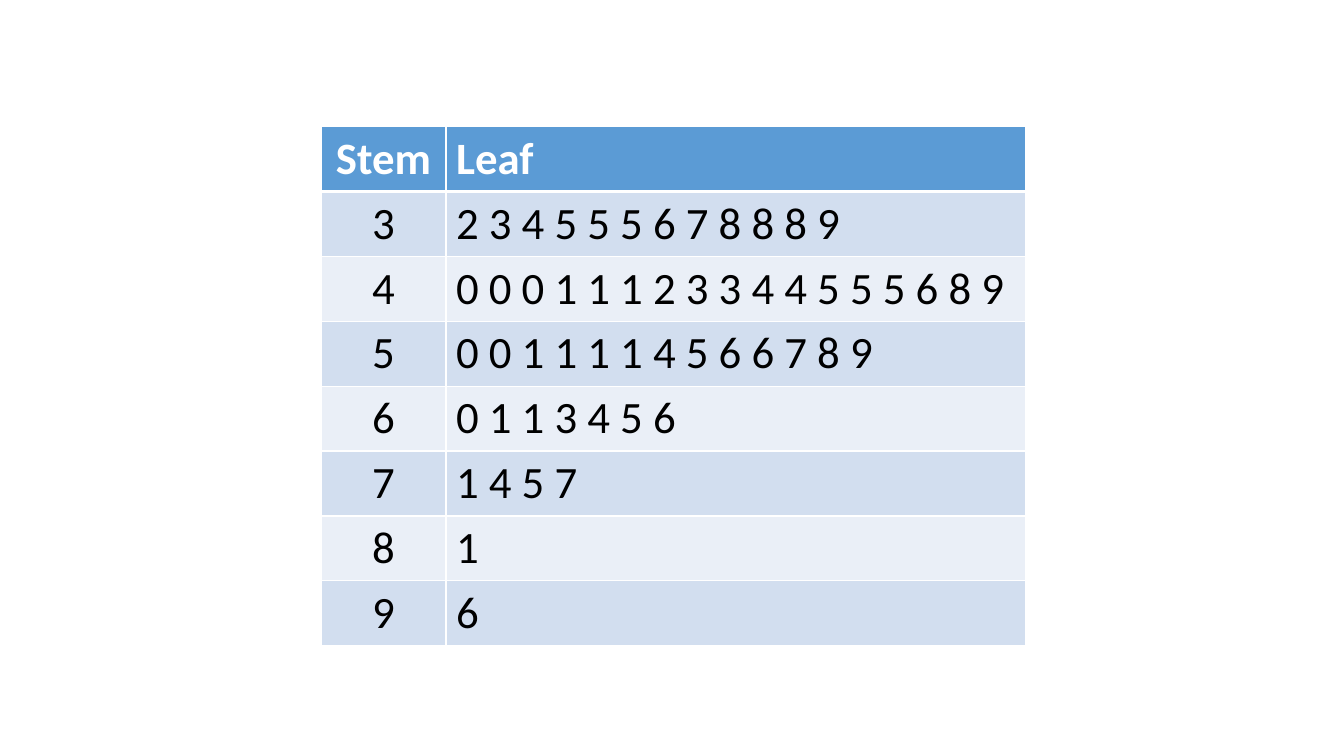
from lxml import etree
from pptx import Presentation
from pptx import util as u
from pptx.dml.color import RGBColor
from pptx.enum import text
from pptx.oxml import ns

WHITE = RGBColor(0xFF, 0xFF, 0xFF)
BLACK = RGBColor(0x00, 0x00, 0x00)
HEADER_BLUE = RGBColor(0x5B, 0x9B, 0xD5)
BAND_DARK = RGBColor(0xD2, 0xDE, 0xEF)
BAND_LIGHT = RGBColor(0xEA, 0xEF, 0xF7)

STEM_AND_LEAF = [
    ("Stem", "Leaf"),
    ("3", "2 3 4 5 5 5 6 7 8 8 8 9"),
    ("4", "0 0 0 1 1 1 2 3 3 4 4 5 5 5 6 8 9"),
    ("5", "0 0 1 1 1 1 4 5 6 6 7 8 9"),
    ("6", "0 1 1 3 4 5 6"),
    ("7", "1 4 5 7"),
    ("8", "1"),
    ("9", "6"),
]


class SlideBuilder:
    font = "Calibri"
    size = u.Pt(32)
    thin = u.Pt(1)
    thick = u.Pt(3)

    def __init__(self, slide):
        self.slide = slide

    def borders(self, cell, row):
        properties = cell._tc.get_or_add_tcPr()
        widths = {
            "lnL": self.thin,
            "lnR": self.thin,
            "lnT": self.thick if row == 1 else self.thin,
            "lnB": self.thick if row == 0 else self.thin,
        }
        for side, width in widths.items():
            line = etree.SubElement(properties, ns.qn(f"a:{side}"), w=str(width))
            fill = etree.SubElement(line, ns.qn("a:solidFill"))
            etree.SubElement(fill, ns.qn("a:srgbClr"), val=str(WHITE))

    def cell(self, cell, wording, row, centred):
        header = row == 0
        self.borders(cell, row)
        cell.fill.solid()
        band = BAND_DARK if row % 2 else BAND_LIGHT
        cell.fill.fore_color.rgb = HEADER_BLUE if header else band
        paragraph = cell.text_frame.paragraphs[0]
        paragraph.alignment = text.PP_ALIGN.CENTER if centred else text.PP_ALIGN.LEFT
        run = paragraph.add_run()
        run.text = wording
        run.font.name = self.font
        run.font.size = self.size
        run.font.bold = header
        run.font.color.rgb = WHITE if header else BLACK

    def table(self, rows, left, top, widths, row_height):
        frame = self.slide.shapes.add_table(
            len(rows), len(widths), u.Cm(left), u.Cm(top),
            u.Cm(sum(widths)), u.Cm(row_height * len(rows)))
        table = frame.table
        for column, width in zip(table.columns, widths):
            column.width = u.Cm(width)
        for r, entries in enumerate(rows):
            table.rows[r].height = u.Cm(row_height)
            for c, wording in enumerate(entries):
                self.cell(table.cell(r, c), wording, r, centred=c == 0)


def main():
    deck = Presentation()
    deck.slide_width = u.Cm(33.87)
    deck.slide_height = u.Cm(19.05)
    builder = SlideBuilder(deck.slides.add_slide(deck.slide_layouts[6]))
    builder.table(STEM_AND_LEAF, left=8.09, top=3.19, widths=(3.15, 14.6), row_height=1.63)
    deck.save("out.pptx")


if __name__ == "__main__":
    main()
